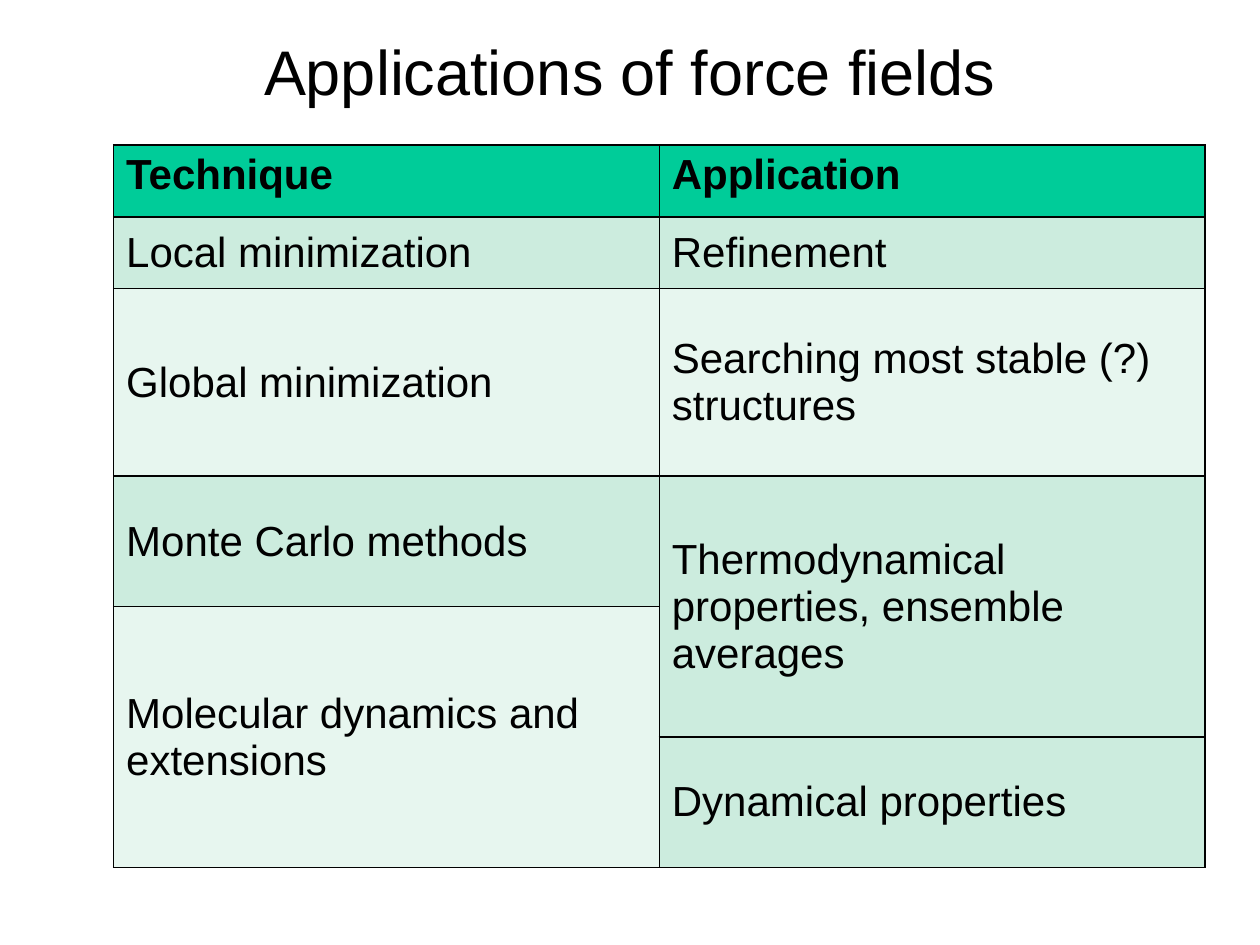
from lxml.etree import SubElement
from pptx import Presentation
from pptx.dml.color import RGBColor
from pptx.enum.text import MSO_ANCHOR, PP_ALIGN
from pptx.oxml.ns import qn
from pptx.util import Cm, Pt

TITLE = "Applications of force fields"
ROWS = [
    ("Technique", "Application"),
    ("Local minimization", "Refinement"),
    ("Global minimization", "Searching most stable (?) structures"),
    ("Monte Carlo methods", "Thermodynamical properties, ensemble averages"),
    ("Molecular dynamics and extensions", None),
    (None, "Dynamical properties"),
]
MERGES = [((3, 1), (4, 1)), ((4, 0), (5, 0))]
ROW_HEIGHTS = [1.45, 1.45, 3.78, 2.63, 2.63, 2.63]
COL_WIDTH = 11

THEME = {
    "font": "Arial",
    "text": "000000",
    "border": "000000",
    "border_pt": 1,
    "header": "00CC99",
    "bands": ("CCECDE", "E7F6EF"),
    "title_pt": 36,
    "cell_pt": 24,
}


def style_text(tf, size, bold=False):
    for p in tf.paragraphs:
        for r in p.runs:
            r.font.name = THEME["font"]
            r.font.size = Pt(size)
            r.font.bold = bold
            r.font.color.rgb = RGBColor.from_string(THEME["text"])


def add_borders(cell):
    tc_pr = cell._tc.get_or_add_tcPr()
    for side in ("a:lnL", "a:lnR", "a:lnT", "a:lnB"):
        ln = SubElement(tc_pr, qn(side), w=str(Pt(THEME["border_pt"])))
        fill = SubElement(ln, qn("a:solidFill"))
        SubElement(fill, qn("a:srgbClr"), val=THEME["border"])


def add_title(s):
    tf = s.shapes.add_textbox(Cm(0.5), Cm(0.53), Cm(24.4), Cm(1.8)).text_frame
    tf.word_wrap = True
    tf.text = TITLE
    tf.paragraphs[0].alignment = PP_ALIGN.CENTER
    style_text(tf, THEME["title_pt"])


def add_techniques(s):
    n_cols = len(ROWS[0])
    table = s.shapes.add_table(
        len(ROWS), n_cols, Cm(2.29), Cm(2.92),
        Cm(COL_WIDTH * n_cols), Cm(sum(ROW_HEIGHTS)),
    ).table
    for col in table.columns:
        col.width = Cm(COL_WIDTH)
    for row, height in zip(table.rows, ROW_HEIGHTS):
        row.height = Cm(height)
    for first, last in MERGES:
        table.cell(*first).merge(table.cell(*last))
    for i, texts in enumerate(ROWS):
        header = i == 0
        color = THEME["header"] if header else THEME["bands"][(i - 1) % 2]
        for j, text in enumerate(texts):
            cell = table.cell(i, j)
            add_borders(cell)
            cell.fill.solid()
            cell.fill.fore_color.rgb = RGBColor.from_string(color)
            cell.vertical_anchor = MSO_ANCHOR.TOP if header else MSO_ANCHOR.MIDDLE
            if text:
                cell.text_frame.text = text
                style_text(cell.text_frame, THEME["cell_pt"], header)


def main():
    prs = Presentation()
    prs.slide_width, prs.slide_height = Cm(25.4), Cm(19.05)
    s = prs.slides.add_slide(prs.slide_layouts[6])
    add_title(s)
    add_techniques(s)
    prs.save("out.pptx")


if __name__ == "__main__":
    main()
